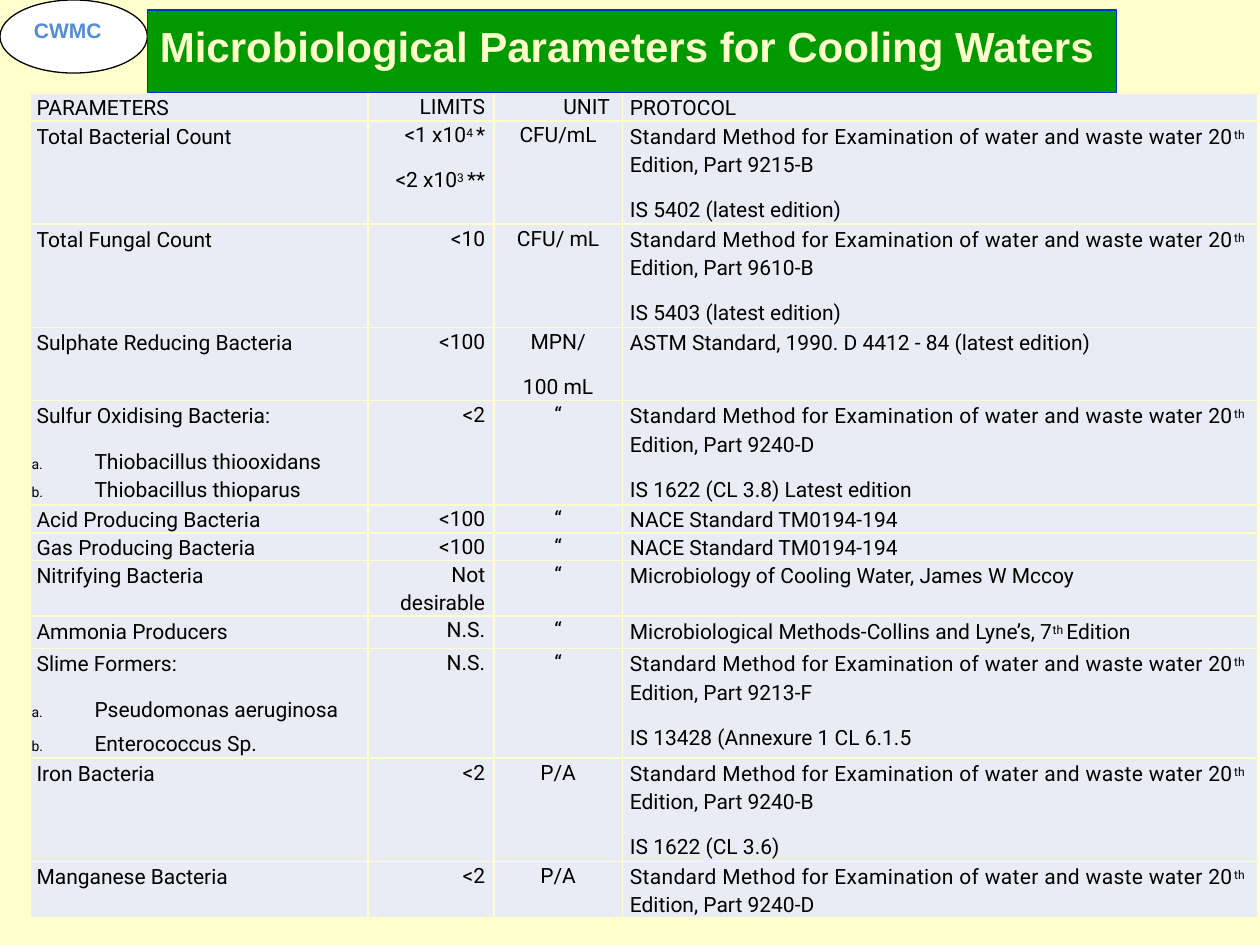
from pptx import Presentation
from pptx.util import Inches, Pt
from pptx.dml.color import RGBColor
from pptx.enum.shapes import MSO_SHAPE as SHAPE
from pptx.enum.text import PP_ALIGN as ALIGN, MSO_ANCHOR as ANCHOR
from pptx.oxml.ns import qn
from lxml.etree import SubElement

CREAM, GREEN, BLUE, CELL = "FFFFCC", "009900", "0033CC", "E9ECF4"
BLACK, WHITE, BADGE = "000000", "FFFFFF", "538DD3"
DITTO = ["“"]
PARA_GAP, LINE_GAP = 12.1, 2.1
TIGHT = 13.6
STANDARD = "Standard Method for Examination of water and waste water 20^th"


def standard(part, *refs):
    return [STANDARD, (f"Edition, Part {part}", LINE_GAP), *refs]


ROWS = [
    (0.22, ["PARAMETERS"], ["LIMITS"], ["UNIT"], ["PROTOCOL"]),
    (0.82, ["Total Bacterial Count"], ["<1 x10^4 ^*", "<2 x10^3 ^**"], ["CFU/mL"],
     standard("9215-B", "IS 5402 (latest edition)")),
    (0.82, ["Total Fungal Count"], ["<10"], ["CFU/ mL"],
     standard("9610-B", "IS 5403 (latest edition)")),
    (0.58, ["Sulphate Reducing Bacteria"], ["<100"], ["MPN/", "100 mL"],
     ["ASTM Standard, 1990. D 4412 - 84 (latest edition)"]),
    (0.83, ["Sulfur Oxidising Bacteria:", "a.\tThiobacillus thiooxidans",
            ("b.\tThiobacillus thioparus", LINE_GAP)], ["<2"], DITTO,
     standard("9240-D", "IS 1622 (CL 3.8) Latest edition")),
    (0.22, ["Acid Producing Bacteria"], ["<100"], DITTO, ["NACE Standard TM0194-194"]),
    (0.22, ["Gas Producing Bacteria"], ["<100"], DITTO, ["NACE Standard TM0194-194"]),
    (0.44, ["Nitrifying Bacteria"], ["Not", ("desirable", LINE_GAP)], DITTO,
     ["Microbiology of Cooling Water, James W Mccoy"]),
    (0.26, ["Ammonia Producers"], ["N.S."], DITTO,
     ["Microbiological Methods-Collins and Lyne’s, 7^th ^Edition"]),
    (0.87, ["Slime Formers:", "a.\tPseudomonas aeruginosa",
            ("b.\tEnterococcus Sp.", 5.9)], ["N.S."], DITTO,
     standard("9213-F", "IS 13428 (Annexure 1 CL 6.1.5")),
    (0.82, ["Iron Bacteria"], ["<2"], ["P/A"], standard("9240-B", "IS 1622 (CL 3.6)")),
    (0.45, ["Manganese Bacteria"], ["<2"], ["P/A"], standard("9240-D")),
]
COLUMNS = [
    (2.68, ALIGN.LEFT, 0.05, 0.03),
    (1.00, ALIGN.RIGHT, 0.07, 0.02),
    (1.02, ALIGN.CENTER, 0, 0.02),
    (5.04, ALIGN.LEFT, 0.06, 0.03),
]


def rgb(color):
    return RGBColor.from_string(color)


def style(r, size, color=BLACK, font="Roboto", bold=False):
    f = r.font
    f.size, f.name, f.bold = Pt(size), font, bold
    f.color.rgb = rgb(color)


def add_box(slide, kind, box, fill, line):
    sp = slide.shapes.add_shape(kind, *map(Inches, box))
    sp.shadow.inherit = False
    sp.fill.solid()
    sp.fill.fore_color.rgb = rgb(fill)
    sp.line.color.rgb = rgb(line)
    sp.line.width = Pt(0.75)
    return sp


def write_label(sp, text, size, color, margins):
    tf = sp.text_frame
    tf.word_wrap = True
    tf.vertical_anchor = ANCHOR.TOP
    tf.margin_left, tf.margin_top = map(Inches, margins)
    tf.margin_right = tf.margin_bottom = 0
    p = tf.paragraphs[0]
    p.text, p.alignment = text, ALIGN.LEFT
    style(p.runs[0], size, color, "Arial", True)


def add_run(p, text, size=12, raised=False):
    r = p.add_run()
    r.text = text
    style(r, size)
    if raised:
        r._r.get_or_add_rPr().set("baseline", "24000")
    return r


def write_paragraph(p, text, align, indent):
    p.alignment = align
    pPr = p._p.get_or_add_pPr()
    marker, tab, body = text.rpartition("\t")
    if align == ALIGN.LEFT:
        pPr.set("marL", str(Inches(0.01 if tab else indent)))
        pPr.set("indent", "0")
    if tab:
        tabs = SubElement(pPr, qn("a:tabLst"))
        SubElement(tabs, qn("a:tab"), pos=str(Inches(0.38)), algn="l")
        add_run(p, marker + tab, 8)
    for i, piece in enumerate(body.split("^")):
        r = add_run(p, piece, raised=i % 2 == 1)
        if text == STANDARD and i == 0:
            r._r.get_or_add_rPr().set("spc", "20")


def style_cell(cell):
    tcPr = cell._tc.get_or_add_tcPr()
    for side in "LRTB":
        ln = SubElement(tcPr, qn(f"a:ln{side}"), w=str(Pt(1)))
        SubElement(SubElement(ln, qn("a:solidFill")), qn("a:srgbClr"), val=CREAM)
    cell.fill.solid()
    cell.fill.fore_color.rgb = rgb(CELL)


def fill_cell(cell, items, align, indent, top, compact):
    style_cell(cell)
    cell.margin_left = cell.margin_bottom = 0
    cell.margin_right = Inches(indent if align == ALIGN.RIGHT else 0)
    cell.margin_top = Inches(top)
    tf = cell.text_frame
    for i, item in enumerate(items):
        text, gap = item if isinstance(item, tuple) else (item, PARA_GAP)
        p = tf.add_paragraph() if i else tf.paragraphs[0]
        if i:
            p.space_before = Pt(gap)
        if compact or 0 < i == len(items) - 1:
            p.line_spacing = Pt(TIGHT)
        write_paragraph(p, text, align, indent)


def add_parameters(slide):
    widths = [c[0] for c in COLUMNS]
    heights = [row[0] for row in ROWS]
    box = (0.24, 0.74, sum(widths), sum(heights))
    table = slide.shapes.add_table(len(ROWS), len(COLUMNS), *map(Inches, box)).table
    table.first_row = table.horz_banding = False
    for col, width in zip(table.columns, widths):
        col.width = Inches(width)
    for y, (height, *cells) in enumerate(ROWS):
        table.rows[y].height = Inches(height)
        for x, (items, (_, align, indent, top)) in enumerate(zip(cells, COLUMNS)):
            if items == ["UNIT"]:
                align, indent = ALIGN.RIGHT, 0.1
            fill_cell(table.cell(y, x), items, align, indent, top, height == min(heights))


def main():
    prs = Presentation()
    prs.slide_width, prs.slide_height = Inches(10), Inches(7.5)
    slide = prs.slides.add_slide(prs.slide_layouts[6])
    slide.background.fill.solid()
    slide.background.fill.fore_color.rgb = rgb(CREAM)
    add_box(slide, SHAPE.OVAL, (0, 0, 1.17, 0.58), WHITE, BLACK)
    badge = slide.shapes.add_textbox(*map(Inches, (0.26, 0.11, 0.55, 0.23)))
    write_label(badge, "CWMC", 12, BADGE, (0.01, 0.03))
    title = add_box(slide, SHAPE.RECTANGLE, (1.17, 0.08, 7.69, 0.66), GREEN, BLUE)
    write_label(title, "Microbiological Parameters for Cooling Waters", 24, CREAM, (0.1, 0.08))
    add_parameters(slide)
    prs.save("out.pptx")


if __name__ == "__main__":
    main()
